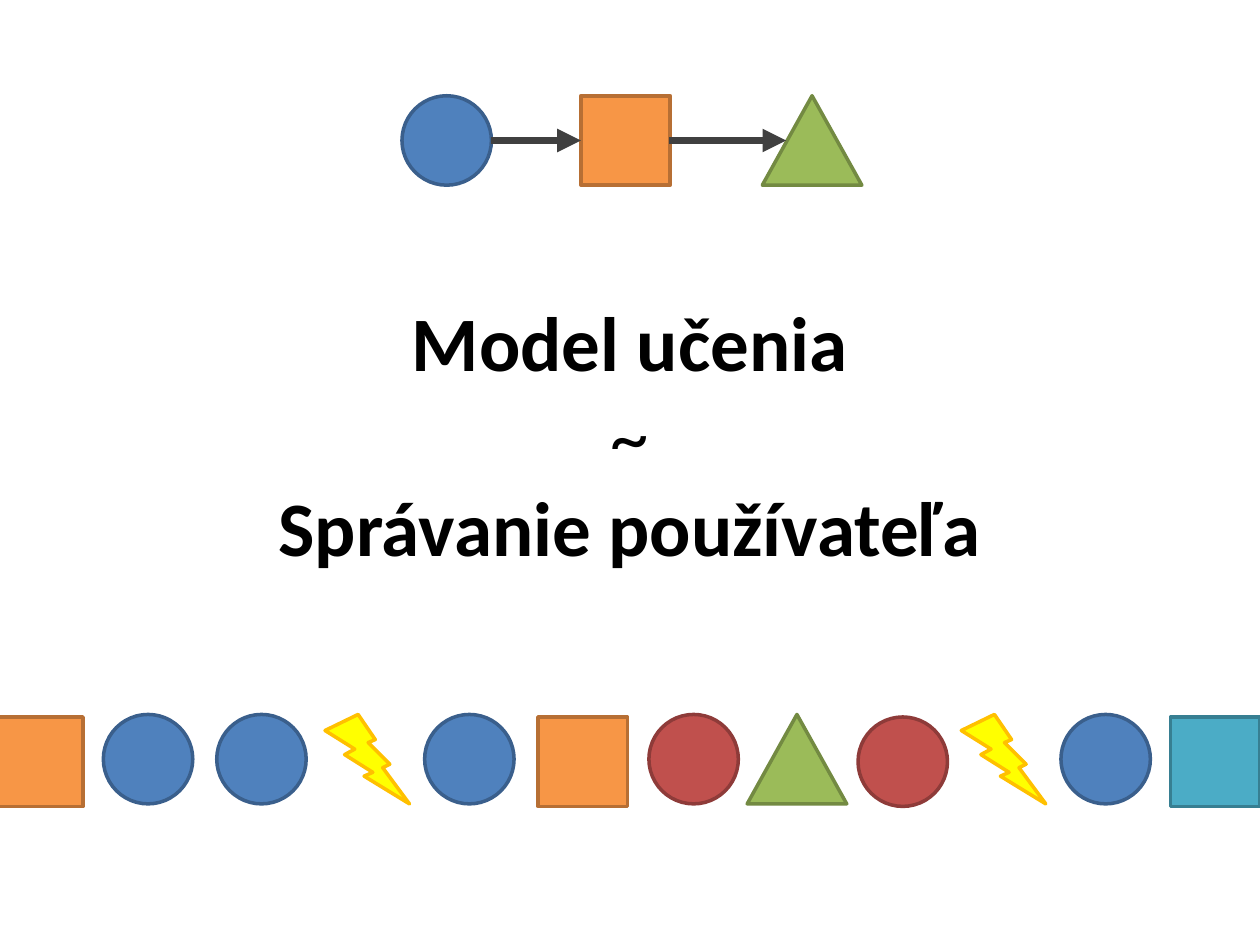
from pptx import Presentation, util as u
from pptx.dml.color import RGBColor
from pptx.enum import shapes, text
from pptx.oxml import parse_xml
from pptx.oxml.ns import nsdecls

BLACK = RGBColor(0x00, 0x00, 0x00)
ARROW_GREY = RGBColor(0x40, 0x40, 0x40)
BLUE, BLUE_EDGE = RGBColor(0x4F, 0x81, 0xBD), RGBColor(0x3A, 0x5F, 0x8C)
ORANGE, ORANGE_EDGE = RGBColor(0xF7, 0x96, 0x46), RGBColor(0xB7, 0x6F, 0x34)
GREEN, GREEN_EDGE = RGBColor(0x9B, 0xBB, 0x59), RGBColor(0x73, 0x8A, 0x42)
RED, RED_EDGE = RGBColor(0xC0, 0x50, 0x4D), RGBColor(0x8E, 0x3B, 0x39)
YELLOW, YELLOW_EDGE = RGBColor(0xFF, 0xFF, 0x00), RGBColor(0xFF, 0xC0, 0x00)
TEAL, TEAL_EDGE = RGBColor(0x4B, 0xAC, 0xC6), RGBColor(0x37, 0x7F, 0x92)

SIZE = 0.71
PRESET = shapes.MSO_SHAPE
# Each symbol: preset, width, fill, edge
CIRCLE = (PRESET.OVAL, SIZE, BLUE, BLUE_EDGE)
RED_CIRCLE = (PRESET.OVAL, SIZE, RED, RED_EDGE)
SQUARE = (PRESET.RECTANGLE, SIZE, ORANGE, ORANGE_EDGE)
TEAL_SQUARE = (PRESET.RECTANGLE, SIZE, TEAL, TEAL_EDGE)
TRIANGLE = (PRESET.ISOSCELES_TRIANGLE, 0.79, GREEN, GREEN_EDGE)
BOLT = (PRESET.LIGHTNING_BOLT, 0.67, YELLOW, YELLOW_EDGE)

deck = Presentation()
deck.slide_width, deck.slide_height = u.Inches(10), u.Inches(7.5)
page = deck.slides.add_slide(deck.slide_layouts[5])


def add_symbol(symbol, left, top):
    preset, width, fill, edge = symbol
    shape = page.shapes.add_shape(
        preset, u.Inches(left), u.Inches(top), u.Inches(width), u.Inches(SIZE))
    shape.shadow.inherit = False
    shape.fill.solid()
    shape.fill.fore_color.rgb = fill
    shape.line.color.rgb = edge
    shape.line.width = u.Pt(2)


# Title
title = page.shapes.title
title.left, title.top = u.Inches(0.5), u.Inches(0.3)
title.width, title.height = u.Inches(9), u.Inches(6.28)
title.text_frame.vertical_anchor = text.MSO_ANCHOR.MIDDLE
para = title.text_frame.paragraphs[0]
para.alignment = text.PP_ALIGN.CENTER
lines = [("Model učenia", True), ("~", False), ("Správanie používateľa", True)]
for row, (words, bold) in enumerate(lines):
    if row:
        para.add_line_break()
    span = para.add_run()
    span.text = words
    span.font.name = "Calibri"
    span.font.size = u.Pt(44)
    span.font.bold = bold
    span.font.color.rgb = BLACK

# Learning model: three symbols joined by arrows
MODEL_TOP = 0.76
for symbol, left in [(CIRCLE, 3.19), (SQUARE, 4.61), (TRIANGLE, 6.05)]:
    add_symbol(symbol, left, MODEL_TOP)

middle = u.Inches(MODEL_TOP + SIZE / 2)
for start, end in [(3.9, 4.61), (5.31, 6.24)]:
    arrow = page.shapes.add_connector(
        shapes.MSO_CONNECTOR.STRAIGHT, u.Inches(start), middle, u.Inches(end), middle)
    arrow.line.color.rgb = ARROW_GREY
    arrow.line.width = u.Pt(4.5)
    arrow.line._get_or_add_ln().append(
        parse_xml(f'<a:tailEnd {nsdecls("a")} type="triangle"/>'))
    arrow._element.spPr.append(parse_xml(f'<a:effectLst {nsdecls("a")}/>'))

# User behaviour: a row of symbols, some set slightly lower
HIGH, LOW = 5.67, 5.69
behaviour = [
    (SQUARE, -0.05, LOW), (CIRCLE, 0.82, HIGH), (CIRCLE, 1.72, HIGH),
    (BOLT, 2.58, HIGH), (CIRCLE, 3.37, HIGH), (SQUARE, 4.27, LOW),
    (RED_CIRCLE, 5.15, HIGH), (TRIANGLE, 5.93, HIGH), (RED_CIRCLE, 6.81, LOW),
    (BOLT, 7.63, HIGH), (CIRCLE, 8.42, HIGH), (TEAL_SQUARE, 9.29, LOW),
]
for symbol, left, top in behaviour:
    add_symbol(symbol, left, top)

deck.save("out.pptx")
